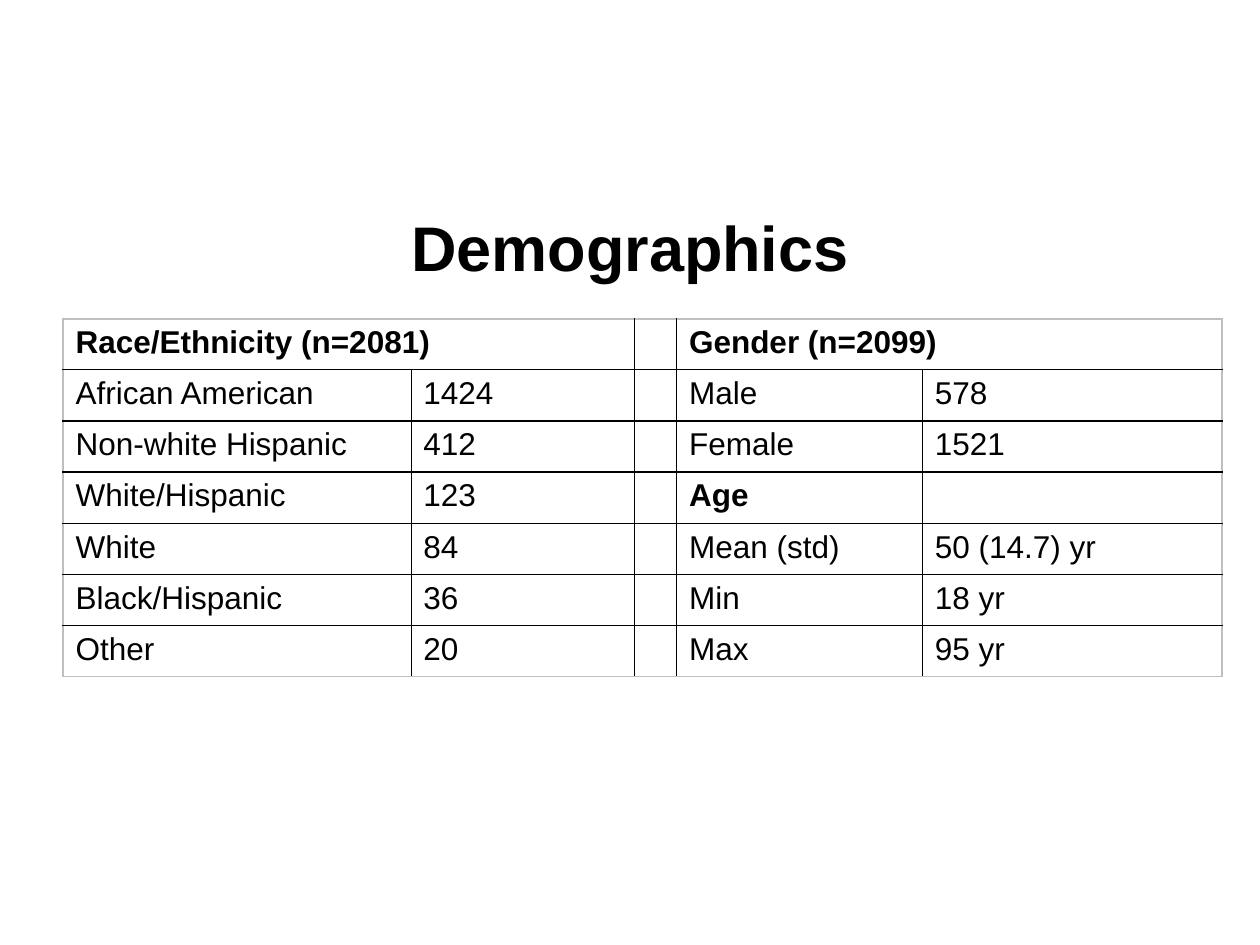
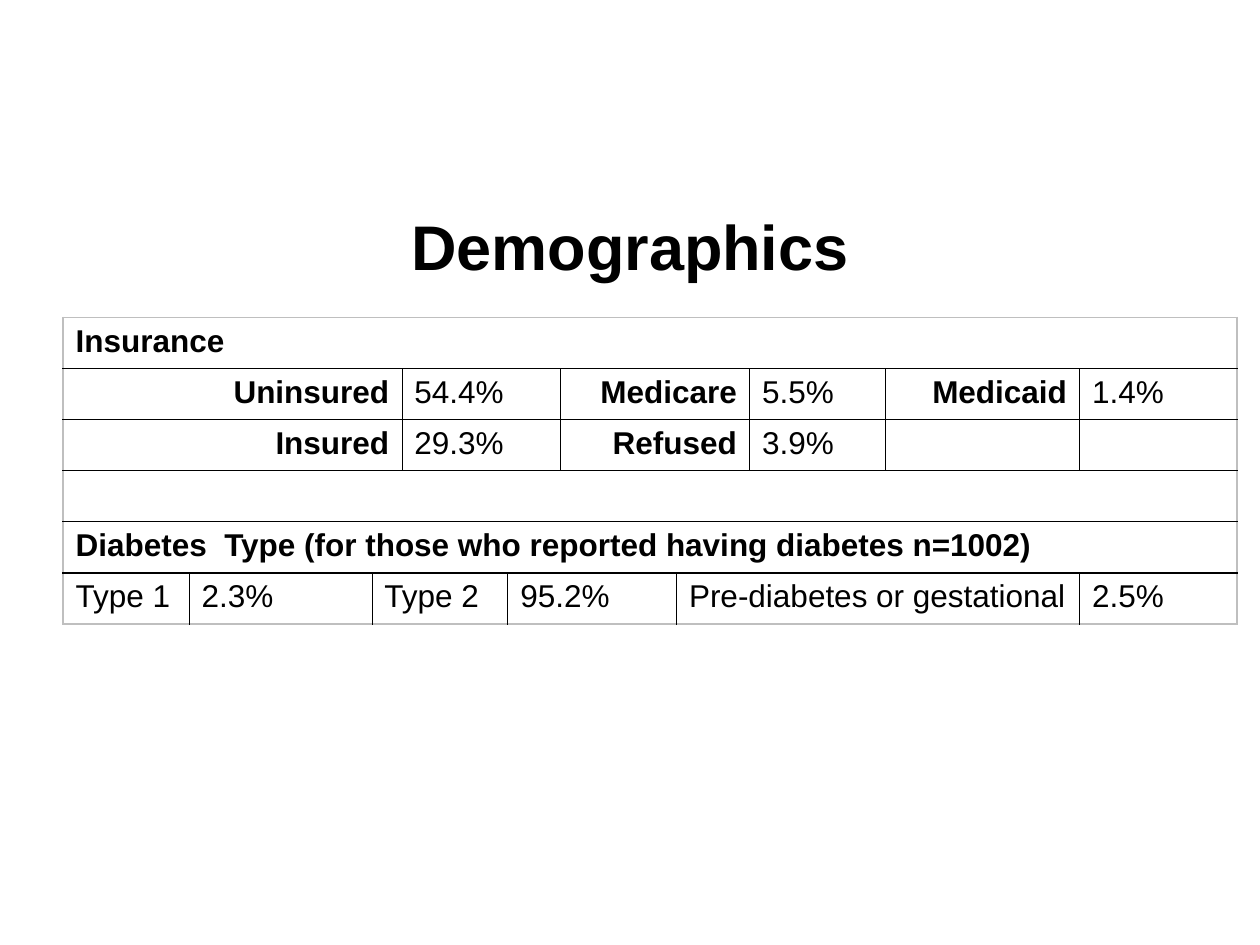
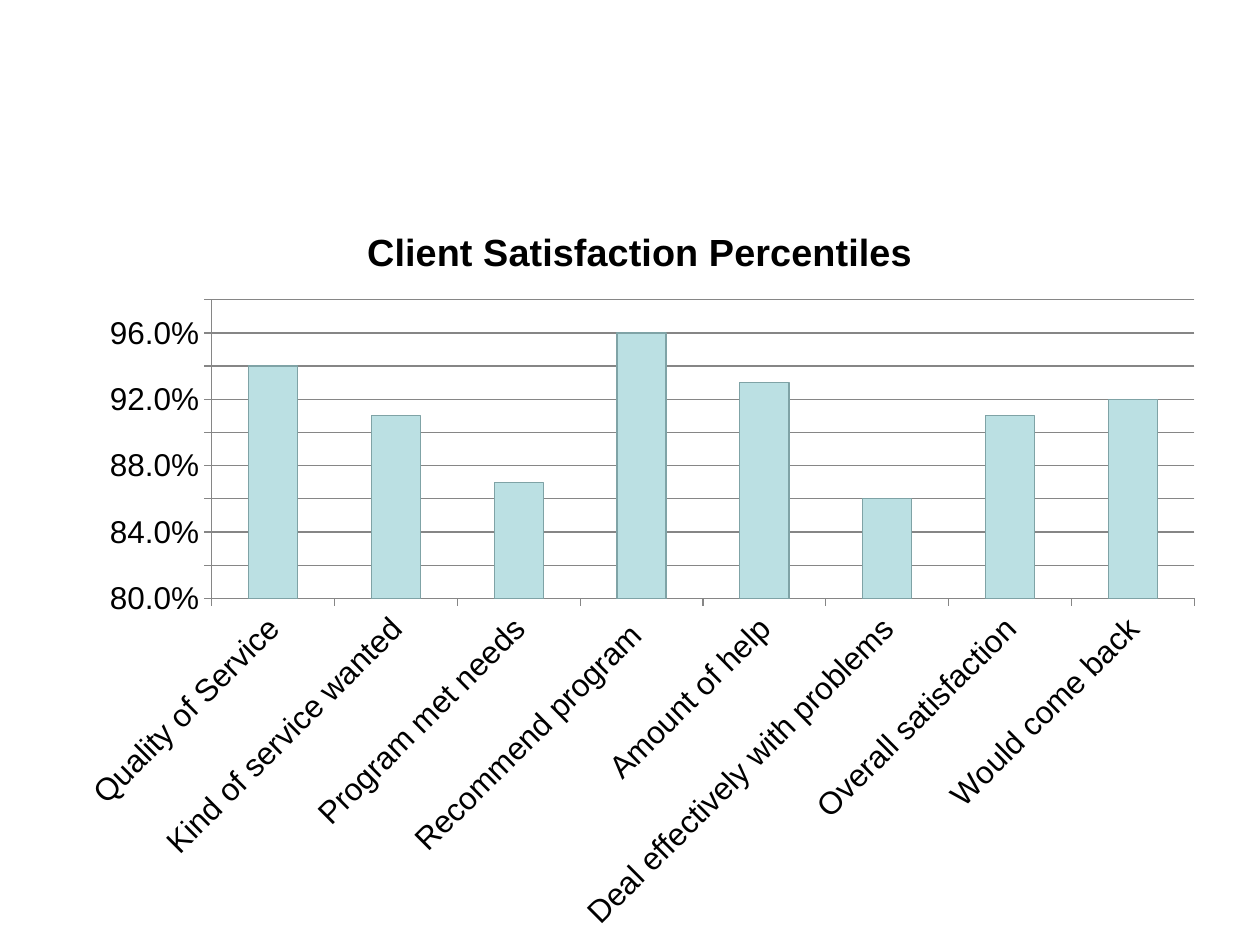
import pptx
import pptx.chart.data
import pptx.dml.color
import pptx.enum.chart
import pptx.enum.text
import pptx.oxml
import pptx.oxml.ns
import pptx.util
from lxml import etree

Inches, Pt = pptx.util.Inches, pptx.util.Pt
RGBColor = pptx.dml.color.RGBColor
ALIGN = pptx.enum.text.PP_ALIGN
ANCHOR = pptx.enum.text.MSO_ANCHOR
qn = pptx.oxml.ns.qn

BLACK = RGBColor(0x00, 0x00, 0x00)
GREY = RGBColor(0x86, 0x86, 0x86)
FRAME = RGBColor(0xBF, 0xBF, 0xBF)
BAR = RGBColor(0xBB, 0xE0, 0xE3)
BAR_EDGE = RGBColor(0x7F, 0xA3, 0xA6)
FONT = "Arial"
LEFT = 0.5
ROW_HEIGHT = Inches(2.84) // 7
OUTER, ROW_LINE, COLUMN_LINE = (1, FRAME), (0.75, BLACK), (0.25, BLACK)


def write(tf, text, size=18, bold=False, align=ALIGN.LEFT):
    p = tf.paragraphs[0]
    p.alignment = align
    r = p.add_run()
    r.text = text
    r.font.name, r.font.size, r.font.bold = FONT, Pt(size), bold
    r.font.color.rgb = BLACK


def add_borders(cell, **lines):
    tcPr = cell._tc.get_or_add_tcPr()
    for i, (side, (width, color)) in enumerate(lines.items()):
        tcPr.insert(i, pptx.oxml.parse_xml(
            f'<a:{side} {pptx.oxml.ns.nsdecls("a")} w="{Pt(width)}">'
            f'<a:solidFill><a:srgbClr val="{color}"/></a:solidFill></a:{side}>'))


prs = pptx.Presentation()
prs.slide_width, prs.slide_height = Inches(10), Inches(7.5)
blank = prs.slide_layouts[6]

# Each cell is text, columns covered, and style: h heading, r right-aligned heading
people = [
    [("Race/Ethnicity (n=2081)", 2, "h"), ("", 1, ""), ("Gender (n=2099)", 2, "h")],
]
for race, count, label, value in [
    ("African American", "1424", "Male", "578"),
    ("Non-white Hispanic", "412", "Female", "1521"),
    ("White/Hispanic", "123", "Age", ""),
    ("White", "84", "Mean (std)", "50 (14.7) yr"),
    ("Black/Hispanic", "36", "Min", "18 yr"),
    ("Other", "20", "Max", "95 yr"),
]:
    style = "h" if label == "Age" else ""
    people.append([(race, 1, ""), (count, 1, ""), ("", 1, ""),
                   (label, 1, style), (value, 1, "")])

coverage = [
    [("Insurance", 10, "h")],
    [("Uninsured", 3, "r"), ("54.4%", 2, ""), ("Medicare", 2, "r"),
     ("5.5%", 1, ""), ("Medicaid", 1, "r"), ("1.4%", 1, "")],
    [("Insured", 3, "r"), ("29.3%", 2, ""), ("Refused", 2, "r"),
     ("3.9%", 1, ""), ("", 1, ""), ("", 1, "")],
    [("", 10, "")],
    [("Diabetes  Type (for those who reported having diabetes n=1002)", 10, "h")],
    [("Type 1", 1, ""), ("2.3%", 1, ""), ("Type 2", 2, ""), ("95.2%", 2, ""),
     ("Pre-diabetes or gestational", 3, ""), ("2.5%", 1, "")],
]

# Demographics slides: a title above a table
for top, columns, rows in [
    (1.33, [2.76, 1.77, 0.34, 1.95, 2.38], people),
    (1.32, [1, 1.45, 0.13, 0.84, 0.42, 0.92, 0.58, 1.08, 1.54, 1.25], coverage),
]:
    s = prs.slides.add_slide(blank)
    tf = s.shapes.add_textbox(Inches(LEFT), Inches(top), Inches(9), Inches(1.25)).text_frame
    tf.word_wrap = True
    tf.vertical_anchor = ANCHOR.MIDDLE
    write(tf, "Demographics", size=36, bold=True, align=ALIGN.CENTER)

    table = s.shapes.add_table(len(rows), len(columns), Inches(LEFT), Inches(top + 1.2),
                               Inches(sum(columns)), ROW_HEIGHT * len(rows)).table
    table.first_row = table.horz_banding = False
    for column, width in zip(table.columns, columns):
        column.width = Inches(width)
    for i, row in enumerate(rows):
        table.rows[i].height = ROW_HEIGHT
        start = 0
        for text, span, style in row:
            end = start + span
            cell = table.cell(i, start)
            if span > 1:
                cell.merge(table.cell(i, end - 1))
            if text:
                write(cell.text_frame, text, bold=bool(style),
                      align=ALIGN.RIGHT if style == "r" else ALIGN.LEFT)
            for j in range(start, end):
                part = table.cell(i, j)
                part.fill.background()
                add_borders(part, lnL=OUTER if start == 0 else COLUMN_LINE,
                            lnR=OUTER if end == len(columns) else COLUMN_LINE,
                            lnT=OUTER if i == 0 else ROW_LINE,
                            lnB=OUTER if i == len(rows) - 1 else ROW_LINE)
            start = end

# Client satisfaction chart
CHART_WIDTH, CHART_HEIGHT = 9.17, 5.92
s = prs.slides.add_slide(blank)
data = pptx.chart.data.CategoryChartData(number_format="0.0%")
data.categories = ["Quality of Service", "Kind of service wanted", "Program met needs",
                   "Recommend program ", "Amount of help", "Deal effectively with problems",
                   "Overall satisfaction", "Would come back"]
data.add_series("Series 1", [0.94, 0.91, 0.87, 0.96, 0.93, 0.86, 0.91, 0.92])
chart = s.shapes.add_chart(pptx.enum.chart.XL_CHART_TYPE.COLUMN_CLUSTERED, Inches(LEFT),
                           Inches(1.58), Inches(CHART_WIDTH), Inches(CHART_HEIGHT), data).chart
chart.has_legend = False
chart.font.name, chart.font.size = FONT, Pt(18)
chart.font.color.rgb = BLACK
chart.has_title = True
write(chart.chart_title.text_frame, "Client Satisfaction Percentiles", size=21.6,
      bold=True, align=ALIGN.CENTER)
chart.chart_title.include_in_layout = False

# Bars
plot = chart.plots[0]
plot.gap_width = 150
plot.vary_by_categories = False
bars = plot.series[0].format
bars.fill.solid()
bars.fill.fore_color.rgb = BAR
bars.line.color.rgb = BAR_EDGE
bars.line.width = Pt(0.75)

# Axes
values = chart.value_axis
values.minimum_scale, values.maximum_scale, values.major_unit = 0.8, 0.98, 0.02
values.has_major_gridlines = True
values.tick_labels.number_format = "0.0%"
values.tick_labels.number_format_is_linked = False
values.major_gridlines.format.line.color.rgb = GREY
for axis in (values, chart.category_axis):
    axis.major_tick_mark = pptx.enum.chart.XL_TICK_MARK.OUTSIDE
    axis.format.line.color.rgb = GREY
    axis.tick_labels.font.size = Pt(18)
body = chart.category_axis._element.find(".//" + qn("a:bodyPr"))
body.set("rot", str(-45 * 60000))

# Places of the plot and the title, in inches from the chart's corner
for tag, index, inches in [("c:plotArea", 0, dict(x=1.18, y=0.8, w=7.8, h=2.37)),
                           ("c:title", 1, dict(x=2.36, y=0.17))]:
    parent = chart._chartSpace.find(".//" + qn(tag))
    layout = parent.find(qn("c:layout"))
    if layout is None:
        layout = etree.Element(qn("c:layout"))
        parent.insert(index, layout)
    manual = etree.SubElement(layout, qn("c:manualLayout"))
    settings = {"layoutTarget": "inner"} if tag == "c:plotArea" else {}
    settings.update(xMode="edge", yMode="edge")
    for name, length in inches.items():
        settings[name] = length / (CHART_WIDTH if name in "xw" else CHART_HEIGHT)
    for name, value in settings.items():
        etree.SubElement(manual, qn("c:" + name)).set("val", str(value))

prs.save("out.pptx")
